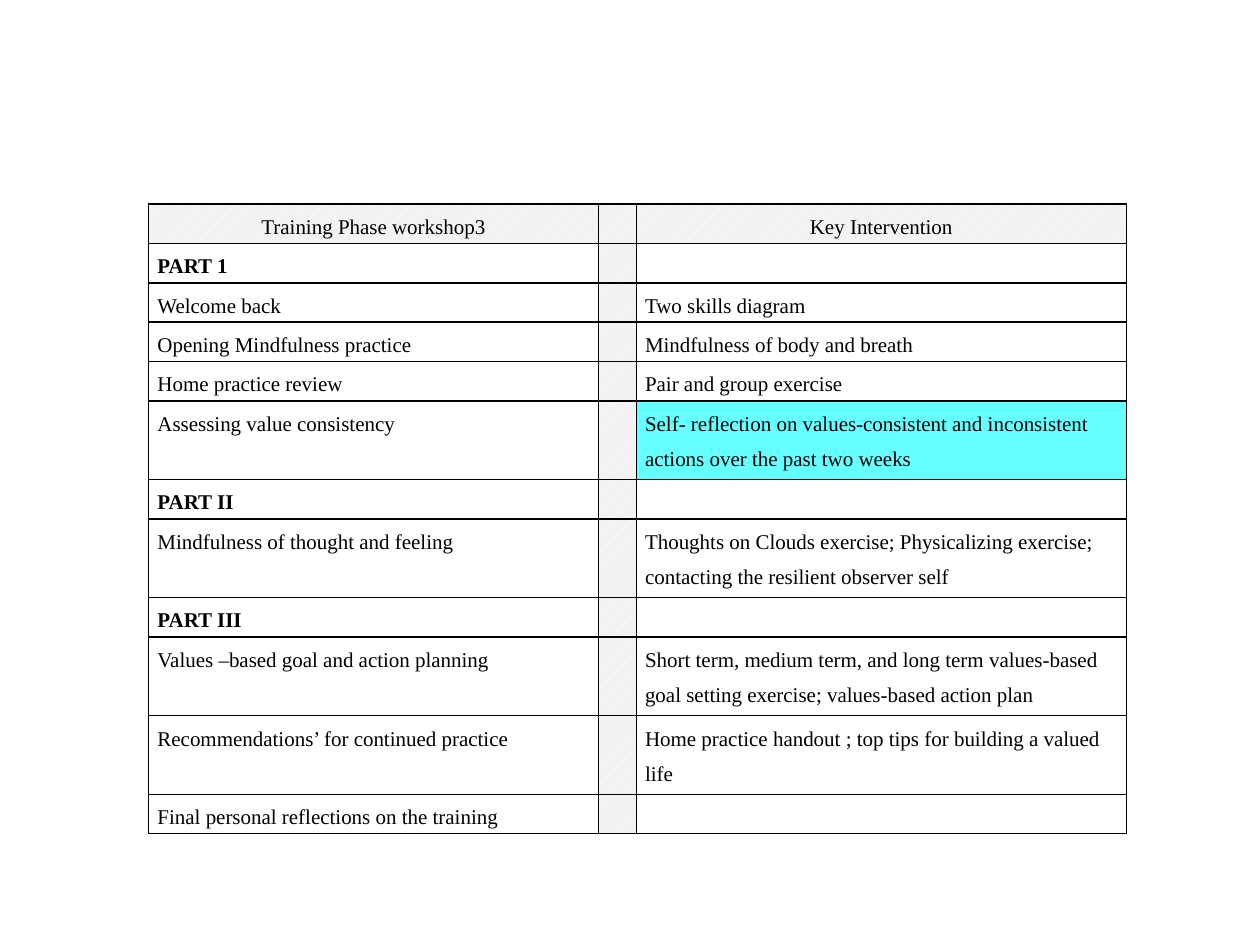
from lxml.etree import SubElement
from pptx import Presentation
from pptx.dml.color import RGBColor
from pptx.enum.dml import MSO_PATTERN
from pptx.enum.text import MSO_ANCHOR, PP_ALIGN as Align
from pptx.oxml import parse_xml
from pptx.oxml.ns import nsdecls, qn
from pptx.util import Inches, Pt

COLORS = {"ink": "000000", "hatch": "FFFFFF", "shade": "F2F2F2", "highlight": "66FFFF"}
COLUMNS = (3.57, 0.3, 3.89)
GAP_COLUMN = 1
HIGHLIGHT_ROW = 5
ROWS = [
    ("Training Phase workshop3", "Key Intervention", 1),
    ("PART 1", "", 1),
    ("Welcome back", "Two skills diagram", 1),
    ("Opening Mindfulness practice", "Mindfulness of body and breath", 1),
    ("Home practice review", "Pair and group exercise", 1),
    ("Assessing value consistency",
     "Self- reflection on values-consistent and inconsistent actions over the past two weeks", 2),
    ("PART II", "", 1),
    ("Mindfulness of thought and feeling",
     "Thoughts on Clouds exercise; Physicalizing exercise; contacting the resilient observer self", 2),
    ("PART III", "", 1),
    ("Values –based goal and action planning",
     "Short term, medium term, and long term values-based goal setting exercise; values-based action plan", 2),
    ("Recommendations’ for continued practice",
     "Home practice handout ; top tips for building a valued life", 2),
    ("Final personal reflections on the training", "", 1),
]


def color(name):
    return RGBColor.from_string(COLORS[name])


def write(frame, text, size=12, bold=False, align=Align.LEFT, spacing=1.5, font="Times New Roman"):
    paragraph = frame.paragraphs[0]
    if not text:
        SubElement(paragraph._p, qn("a:endParaRPr"), sz=str(size * 100))
        return
    paragraph.alignment = align
    paragraph.line_spacing = spacing
    run = paragraph.add_run()
    run.text = text
    run.font.name = font
    run.font.size = Pt(size)
    run.font.bold = bold
    run.font.color.rgb = color("ink")


class SlideBuilder:
    """Draws styled elements on one slide, placed by shares of its size."""

    def __init__(self, presentation, border=1):
        self.width = presentation.slide_width
        self.height = presentation.slide_height
        self.slide = presentation.slides.add_slide(presentation.slide_layouts[6])
        self.border = border

    def fill(self, cell, row, column):
        if row == 0 or column == GAP_COLUMN:
            cell.fill.patterned()
            cell.fill.pattern = MSO_PATTERN.PERCENT_5
            cell.fill.fore_color.rgb = color("hatch")
            cell.fill.back_color.rgb = color("shade")
        elif row == HIGHLIGHT_ROW and column > GAP_COLUMN:
            cell.fill.solid()
            cell.fill.fore_color.rgb = color("highlight")
        else:
            cell.fill.background()

    def outline(self, cell):
        properties = cell._tc.get_or_add_tcPr()
        for index, side in enumerate(("lnL", "lnR", "lnT", "lnB")):
            properties.insert(index, parse_xml(
                f'<a:{side} {nsdecls("a")} w="{Pt(self.border)}"><a:solidFill>'
                f'<a:srgbClr val="{COLORS["ink"]}"/></a:solidFill></a:{side}>'))

    def table(self, left, top, width, height, columns, rows):
        table_width, table_height = int(width * self.width), int(height * self.height)
        table = self.slide.shapes.add_table(
            len(rows), len(columns), int(left * self.width), int(top * self.height),
            table_width, table_height).table
        table.first_row = table.horz_banding = False
        for column, share in zip(table.columns, columns):
            column.width = int(table_width * share / sum(columns))
        units = sum(lines for _, _, lines in rows)
        for row, (phase, intervention, lines) in enumerate(rows):
            table.rows[row].height = table_height * lines // units
            for column, text in enumerate((phase, "", intervention)):
                cell = table.cell(row, column)
                cell.margin_left = cell.margin_right = Inches(0.07)
                cell.margin_top = cell.margin_bottom = 0
                cell.vertical_anchor = MSO_ANCHOR.TOP
                write(cell.text_frame, text, bold=text.startswith("PART"),
                      align=Align.LEFT if row else Align.CENTER)
                self.fill(cell, row, column)
                self.outline(cell)


def main():
    presentation = Presentation()
    presentation.slide_width, presentation.slide_height = Inches(10), Inches(7.5)
    builder = SlideBuilder(presentation)
    builder.table(0.118, 0.216, 0.776, 2 / 3, COLUMNS, ROWS)
    presentation.save("out.pptx")


if __name__ == "__main__":
    main()
